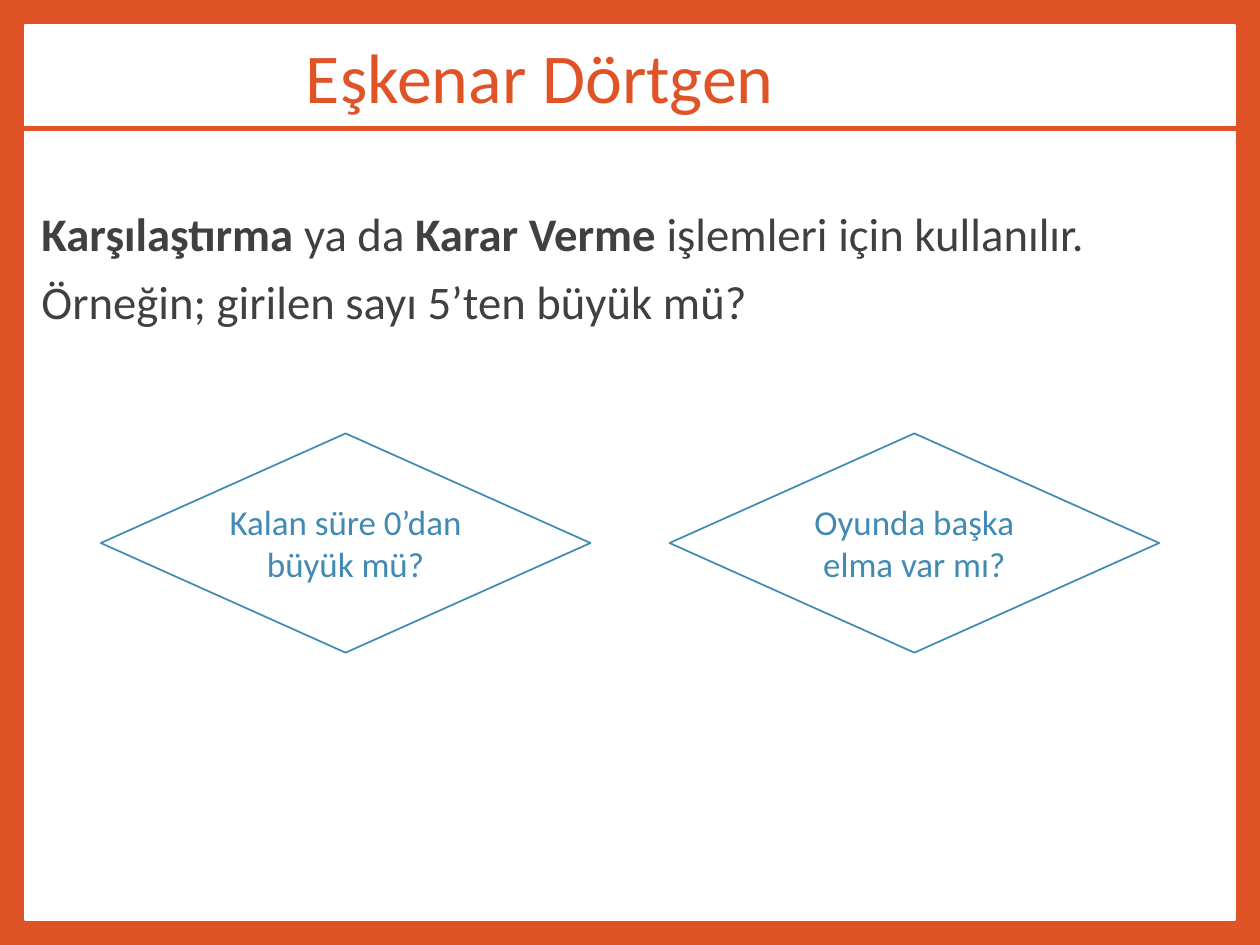
import pptx
import pptx.util
import pptx.dml.color
import pptx.enum.shapes
import pptx.enum.text
import pptx.oxml
import pptx.oxml.ns

ORANGE = pptx.dml.color.RGBColor(0xDF, 0x53, 0x27)
BLUE = pptx.dml.color.RGBColor(0x41, 0x8A, 0xB3)
GREY = pptx.dml.color.RGBColor(0x40, 0x40, 0x40)
WHITE = pptx.dml.color.RGBColor(0xFF, 0xFF, 0xFF)
FONT = "Calibri"
CELL = 0.15
COLS = 50
SHAPE = pptx.enum.shapes.MSO_SHAPE
ALIGN = pptx.enum.text.PP_ALIGN
QUESTIONS = ["Kalan süre 0’dan büyük mü?", "Oyunda başka elma var mı?"]
BODY = [
    [("Karşılaştırma", True), (" ya da ", False), ("Karar Verme ", True),
     ("işlemleri için kullanılır.", False)],
    [("Örneğin; girilen sayı 5’ten büyük mü?", False)],
]


def grid(*cells):
    return [pptx.util.Inches(cell * CELL) for cell in cells]


def place(sp, *box):
    sp.left, sp.top, sp.width, sp.height = grid(*box)


def setup_frame(sp):
    tf = sp.text_frame
    tf.word_wrap = True
    tf.auto_size = pptx.enum.text.MSO_AUTO_SIZE.NONE
    tf.vertical_anchor = pptx.enum.text.MSO_ANCHOR.MIDDLE
    return tf


def add_run(p, text, size, color, bold=False):
    r = p.add_run()
    r.text = text
    r.font.name = FONT
    r.font.size = pptx.util.Pt(size)
    r.font.bold = bold
    r.font.color.rgb = color


def add_outlined(slide, kind, box, color, width):
    sp = slide.shapes.add_shape(kind, *grid(*box))
    sp.shadow.inherit = False
    sp.line.color.rgb = color
    sp.line.width = pptx.util.Pt(width)
    return sp


def add_panel(slide):
    sp = add_outlined(slide, SHAPE.RECTANGLE, (1, 1, 48, 35.5), WHITE, 1)
    sp.fill.solid()
    sp.fill.fore_color.rgb = WHITE
    slide.shapes.element.insert(2, sp.element)


def fill_title(slide):
    sp = slide.shapes.title
    place(sp, 0.87, 0, 41.13, 6.43)
    p = setup_frame(sp).paragraphs[0]
    p.alignment = ALIGN.CENTER
    p.line_spacing = 0.9
    add_run(p, "Eşkenar Dörtgen", 30, ORANGE)


def fill_body(slide):
    sp = slide.placeholders[1]
    place(sp, 0.98, 6.4, 48.2, 8.67)
    tf = setup_frame(sp)
    for i, runs in enumerate(BODY):
        p = tf.add_paragraph() if i else tf.paragraphs[0]
        p.line_spacing = 0.9
        p.space_before = pptx.util.Pt(7.5)
        pPr = p._p.get_or_add_pPr()
        pPr.set("marL", "0")
        pPr.set("indent", "0")
        pPr.append(pptx.oxml.parse_xml("<a:buNone %s/>" % pptx.oxml.ns.nsdecls("a")))
        for text, bold in runs:
            add_run(p, text, 20, GREY, bold)


def add_rule(slide):
    x1, x2, y = grid(0.33, 49.13, 5.1)
    line = slide.shapes.add_connector(
        pptx.enum.shapes.MSO_CONNECTOR.STRAIGHT, x1, y, x2, y)
    line.line.color.rgb = ORANGE
    line.line.width = pptx.util.Pt(2.25)
    line.element.spPr.append(
        pptx.oxml.parse_xml("<a:effectLst %s/>" % pptx.oxml.ns.nsdecls("a")))


def add_decision(slide, col, width, text):
    box = (col, 17.2, width, 8.7)
    sp = add_outlined(slide, SHAPE.FLOWCHART_DECISION, box, BLUE, 0.75)
    sp.fill.background()
    tf = setup_frame(sp)
    tf.margin_left = tf.margin_top = tf.margin_right = tf.margin_bottom = 0
    p = tf.paragraphs[0]
    p.alignment = ALIGN.CENTER
    add_run(p, text, 15, BLUE)


def main():
    prs = pptx.Presentation()
    prs.slide_width = pptx.util.Inches(COLS * CELL)
    prs.slide_height = prs.slide_width * 3 // 4
    slide = prs.slides.add_slide(prs.slide_layouts[1])
    slide.background.fill.solid()
    slide.background.fill.fore_color.rgb = ORANGE
    add_panel(slide)
    fill_title(slide)
    fill_body(slide)
    add_rule(slide)
    margin, width = 4, 19.43
    for col, text in zip((margin, COLS - margin - width), QUESTIONS):
        add_decision(slide, col, width, text)
    prs.save("out.pptx")


if __name__ == "__main__":
    main()
